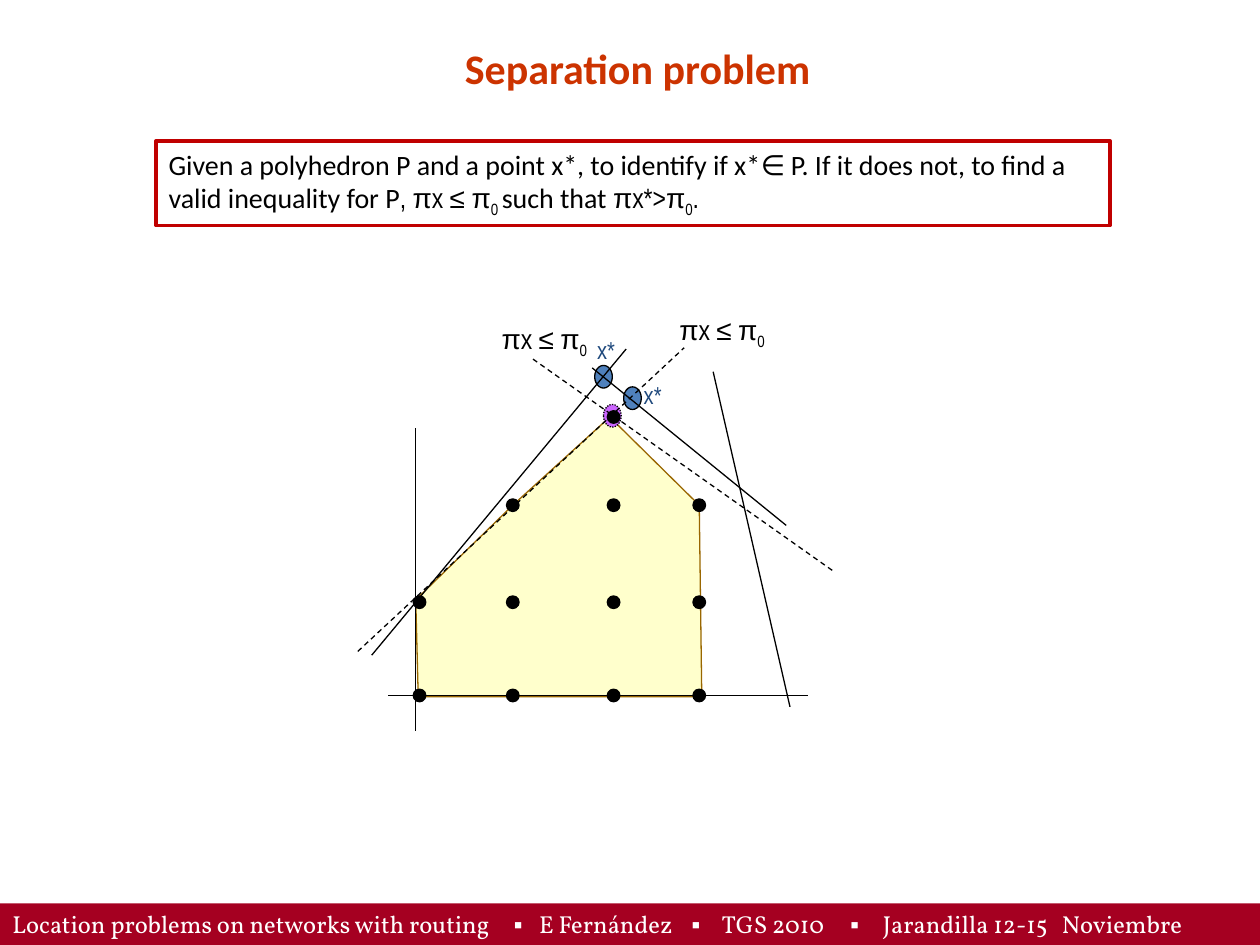
from lxml.etree import SubElement
from pptx import Presentation
from pptx.dml.color import RGBColor
from pptx.enum.dml import MSO_LINE_DASH_STYLE as Dash
from pptx.enum.shapes import MSO_CONNECTOR, MSO_SHAPE
from pptx.enum.text import MSO_ANCHOR, PP_ALIGN
from pptx.oxml.ns import qn
from pptx.util import Inches, Pt


def rgb(hex_code):
    return RGBColor.from_string(hex_code)


def write(paragraph, runs, size, color, align=PP_ALIGN.LEFT):
    paragraph.alignment = align
    for text, font_name, *subscript in runs:
        run = paragraph.add_run()
        run.text = text
        run.font.name = font_name
        run.font.size = Pt(size)
        run.font.color.rgb = rgb(color)
        if subscript:
            run._r.get_or_add_rPr().set("baseline", "-25000")


prs = Presentation()
prs.slide_width, prs.slide_height = Inches(10), Inches(7.5)
slide = prs.slides.add_slide(prs.slide_layouts[5])
shapes = slide.shapes
filled = []

title = shapes.title
title.left, title.top = Inches(2.1), Inches(0.29)
title.width, title.height = Inches(5.92), Inches(0.5)
title.text_frame.vertical_anchor = MSO_ANCHOR.TOP
heading = title.text_frame.paragraphs[0]
write(heading, [("Separation problem", "Calibri")], 24, "CC3300", PP_ALIGN.CENTER)
heading.runs[0].font.bold = True

footer = shapes.add_shape(MSO_SHAPE.RECTANGLE, Inches(0), Inches(7.17), Inches(10), Inches(0.33))
filled.append((footer, "A50021", None, 0))
footer_line = footer.text_frame.paragraphs[0]
tabs = SubElement(footer_line._p.get_or_add_pPr(), qn("a:tabLst"))
for stop in (3.98, 4.18, 5.39, 5.63, 6.65, 6.91, 8.33):
    SubElement(tabs, qn("a:tab"), pos=str(Inches(stop)), algn="l")
write(footer_line, [
    ("Location problems on networks with routing\t", "Vollkorn"), ("▪", "Calibri"),
    ("\tE Fernández\t", "Vollkorn"), ("▪", "Calibri"),
    ("\tTGS 2010\t", "Vollkorn"), ("▪", "Calibri"),
    ("\tJarandilla 12-15\tNoviembre", "Vollkorn"),
], 14, "FFFFFF")

inequality = [("π", "Arial"), ("x ≤ ", "Arial Narrow"), ("π", "Arial")]
statement = shapes.add_shape(MSO_SHAPE.RECTANGLE, Inches(1.24), Inches(1.12), Inches(7.57), Inches(0.67))
filled.append((statement, "FFFFFF", "C00000", 2.25))
statement.text_frame.word_wrap = True
statement.text_frame.vertical_anchor = MSO_ANCHOR.TOP
write(statement.text_frame.paragraphs[0], [
    ("Given a polyhedron P and a point x*, to identify if x*∈ P. "
     "If it does not, to find a valid inequality for P", "Calibri"),
    (", ", "Arial Narrow"), *inequality, ("0 ", "Arial Narrow", True),
    ("such that ", "Calibri"), ("π", "Arial"), ("x*>", "Arial Narrow"),
    ("π", "Arial"), ("0", "Arial Narrow", True), (".", "Arial Narrow"),
], 16, "000000")

corners = [(3.32, 5.53), (3.3, 4.76), (4.07, 4.01), (4.84, 3.31), (5.55, 4.01), (5.57, 5.53)]
outline = [(Inches(x), Inches(y)) for x, y in corners]
builder = shapes.build_freeform(*outline[0])
builder.add_line_segments(outline[1:], close=True)
polyhedron = builder.convert_to_shape()
filled.append((polyhedron, "FFFFCC", "996600", 0.75))

for left, top, fill in ((4.95, 3.07, "4F81BD"), (4.72, 2.9, "4F81BD"), (4.79, 3.21, "CC66FF")):
    point = shapes.add_shape(MSO_SHAPE.OVAL, Inches(left), Inches(top), Inches(0.14), Inches(0.18))
    filled.append((point, fill, "000000", 0.75))
optimal_vertex = point
optimal_vertex.line.dash_style = Dash.ROUND_DOT

for x1, y1, x2, y2, dash in (
    (2.84, 5.17, 5.43, 2.76, Dash.DASH),
    (4.23, 2.85, 6.61, 4.53, Dash.DASH),
    (3.08, 5.52, 6.41, 5.52, None),
    (3.3, 3.4, 3.3, 5.8, None),
    (2.95, 5.2, 4.97, 2.77, None),
    (4.7, 2.92, 6.24, 4.17, None),
    (5.66, 2.95, 6.27, 5.61, None),
):
    constraint = shapes.add_connector(
        MSO_CONNECTOR.STRAIGHT, Inches(x1), Inches(y1), Inches(x2), Inches(y2))
    constraint.line.color.rgb = rgb("000000")
    constraint.line.width = Pt(0.75)
    constraint.line.dash_style = dash
    SubElement(constraint._element.spPr, qn("a:effectLst"))

columns = (3.28, 4.02, 4.82, 5.5)
lattice = [(4.82, 3.26)]
lattice += [(x, 3.96) for x in columns[1:]]
lattice += [(x, y) for y in (4.73, 5.47) for x in columns]
for left, top in lattice:
    integer_point = shapes.add_shape(MSO_SHAPE.OVAL, Inches(left), Inches(top), Inches(0.1), Inches(0.1))
    filled.append((integer_point, "000000", "000000", 0.75))

for shape, fill, border, width in filled:
    shape.shadow.inherit = False
    shape.fill.solid()
    shape.fill.fore_color.rgb = rgb(fill)
    if border:
        shape.line.color.rgb = rgb(border)
        shape.line.width = Pt(width)
    else:
        shape.line.fill.background()

cut = inequality + [("0", "Arial Narrow", True)]
star = [("x*", "Arial Narrow")]
for left, top, width, height, runs, size, color in (
    (5.17, 2.43, 1.12, 0.37, cut, 16, "000000"),
    (3.76, 2.5, 1.12, 0.37, cut, 16, "000000"),
    (4.62, 2.61, 0.38, 0.33, star, 14, "1F497D"),
    (4.99, 2.97, 0.38, 0.33, star, 14, "1F497D"),
):
    label = shapes.add_textbox(Inches(left), Inches(top), Inches(width), Inches(height))
    label.text_frame.word_wrap = True
    write(label.text_frame.paragraphs[0], runs, size, color, PP_ALIGN.CENTER)

prs.save("out.pptx")
